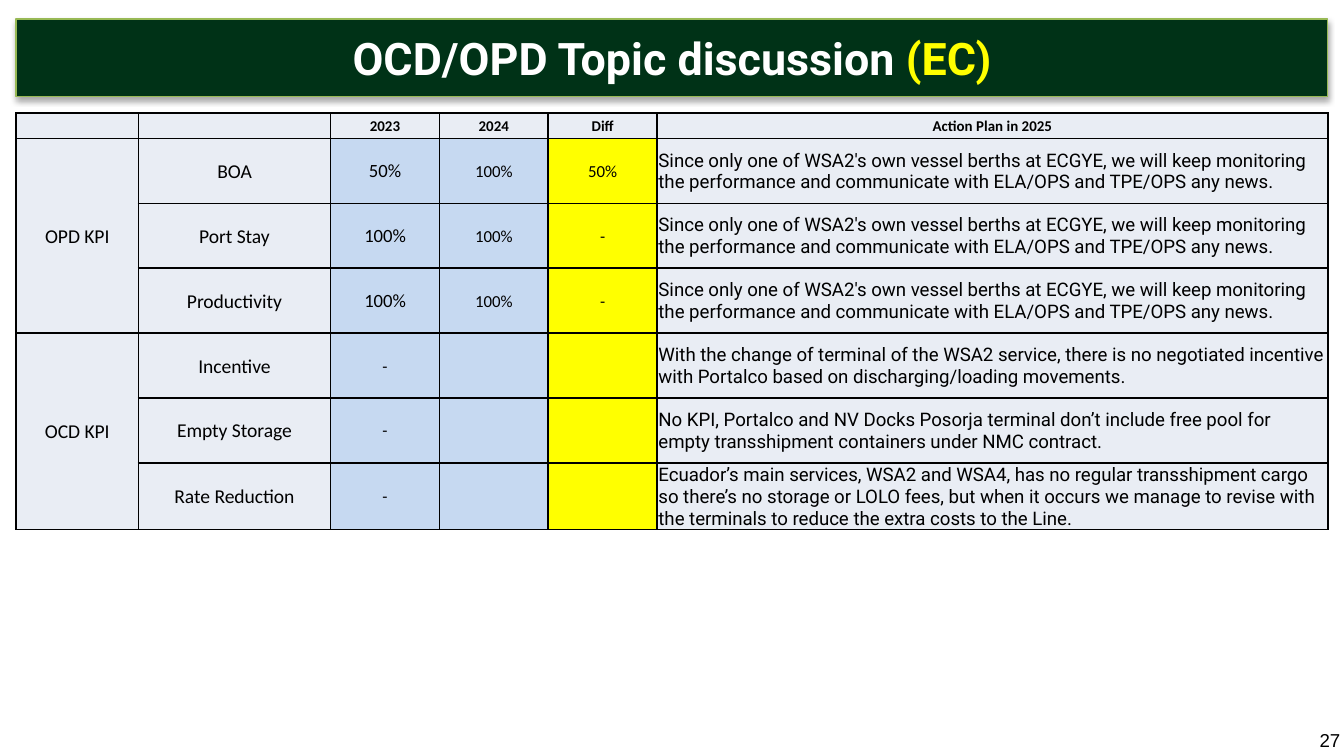
"""Build the OCD/OPD topic discussion slide with its KPI table."""
from lxml.etree import SubElement
from pptx import Presentation
from pptx.dml.color import RGBColor
from pptx.enum.text import MSO_ANCHOR, MSO_AUTO_SIZE, PP_ALIGN
from pptx.oxml.ns import qn
from pptx.util import Inches, Pt

COLORS = {
    "banner": "003217", "banner_line": "98B955", "white": "FFFFFF",
    "black": "000000", "pale": "E9EDF4", "blue": "C6D9F1", "yellow": "FFFF00",
}
TITLE = [("OCD/OPD Topic discussion ", "white"), ("(EC)", "yellow")]
PAGE_NUMBER = "27"
HEADER = ["", "", "2023", "2024", "Diff", "Action Plan in 2025"]
MONITORING = (
    "Since only one of WSA2's own vessel berths at ECGYE, we will keep monitoring "
    "the performance and communicate with ELA/OPS and TPE/OPS any news."
)
GROUPS = {
    "OPD KPI": [
        ("BOA", "50%", "100%", "50%", MONITORING),
        ("Port Stay", "100%", "100%", "-", MONITORING),
        ("Productivity", "100%", "100%", "-", MONITORING),
    ],
    "OCD KPI": [
        ("Incentive", "-", "", "",
         "With the change of terminal of the WSA2 service, there is no negotiated "
         "incentive with Portalco based on discharging/loading movements."),
        ("Empty Storage", "-", "", "",
         "No KPI, Portalco and NV Docks Posorja terminal don’t include free pool for "
         "empty transshipment containers under NMC contract."),
        ("Rate Reduction", "-", "", "",
         "Ecuador’s main services, WSA2 and WSA4, has no regular transshipment cargo "
         "so there’s no storage or LOLO fees, but when it occurs we manage to revise "
         "with the terminals to reduce the extra costs to the Line."),
    ],
}
COLUMNS = [
    (0.91, "pale", 10.5, "Calibri"), (1.43, "pale", 10.5, "Calibri"),
    (0.81, "blue", 10, "Calibri"), (0.81, "blue", 9, "Calibri"),
    (0.81, "yellow", 9, "Calibri"), (4.99, "pale", 10, "Roboto"),
]
SLIDE_WIDTH = 10
SLIDE_HEIGHT = SLIDE_WIDTH * 9 / 16
MARGIN = 0.12
CONTENT_WIDTH = SLIDE_WIDTH - 2 * MARGIN
TABLE_TOP, TABLE_HEIGHT, HEADER_HEIGHT = 0.84, 3.09, 0.19


def color(name):
    return RGBColor.from_string(COLORS[name])


def style(font, size, face, color_name="black", bold=False):
    font.size, font.name, font.bold = Pt(size), face, bold
    font.color.rgb = color(color_name)


def set_insets(frame, horizontal, top, bottom):
    frame.margin_left = frame.margin_right = Inches(horizontal)
    frame.margin_top, frame.margin_bottom = Inches(top), Inches(bottom)


def add_shadow(shape):
    effects = SubElement(shape.element.spPr, qn("a:effectLst"))
    shadow = SubElement(effects, qn("a:outerShdw"), blurRad=str(Pt(3.1)),
                        dist=str(Pt(1.8)), dir="5400000", rotWithShape="0")
    tint = SubElement(shadow, qn("a:srgbClr"), val=COLORS["black"])
    SubElement(tint, qn("a:alpha"), val="35000")


def add_borders(cell):
    properties = cell._tc.get_or_add_tcPr()
    for side in ("lnL", "lnR", "lnT", "lnB"):
        line = SubElement(properties, qn(f"a:{side}"), w=str(Pt(1)))
        fill = SubElement(line, qn("a:solidFill"))
        SubElement(fill, qn("a:srgbClr"), val=COLORS["black"])


def fill_cell(cell, text, fill_name, size, face, bold=False, centred=True):
    add_borders(cell)
    cell.fill.solid()
    cell.fill.fore_color.rgb = color(fill_name)
    cell.vertical_anchor = MSO_ANCHOR.MIDDLE
    set_insets(cell, 0.01, 0.01, 0)
    paragraph = cell.text_frame.paragraphs[0]
    paragraph.text = text
    paragraph.alignment = PP_ALIGN.CENTER if centred else PP_ALIGN.LEFT
    for run in paragraph.runs:
        style(run.font, size, face, bold=bold)
    SubElement(paragraph._p, qn("a:endParaRPr"), sz=str(int(size * 100)))


def add_title(slide):
    banner = slide.shapes.title
    banner.left, banner.top = Inches(MARGIN), Inches(0.14)
    banner.width, banner.height = Inches(CONTENT_WIDTH), Inches(0.58)
    banner.fill.solid()
    banner.fill.fore_color.rgb = color("banner")
    banner.line.color.rgb = color("banner_line")
    banner.line.width = Pt(0.75)
    add_shadow(banner)
    frame = banner.text_frame
    frame.auto_size = MSO_AUTO_SIZE.NONE
    frame.vertical_anchor = MSO_ANCHOR.MIDDLE
    set_insets(frame, 0, 0, 0)
    paragraph = frame.paragraphs[0]
    paragraph.alignment = PP_ALIGN.CENTER
    for text, color_name in TITLE:
        run = paragraph.add_run()
        run.text = text
        style(run.font, 24, "Roboto", color_name, bold=True)


def add_kpi_table(slide):
    rows = [(group if i == 0 else "", *kpi)
            for group, kpis in GROUPS.items() for i, kpi in enumerate(kpis)]
    kpi_table = slide.shapes.add_table(
        len(rows) + 1, len(COLUMNS), Inches(MARGIN), Inches(TABLE_TOP),
        Inches(CONTENT_WIDTH), Inches(TABLE_HEIGHT)).table
    for column, (width, *_) in zip(kpi_table.columns, COLUMNS):
        column.width = Inches(width)
    for row in kpi_table.rows:
        row.height = Inches((TABLE_HEIGHT - HEADER_HEIGHT) / len(rows))
    kpi_table.rows[0].height = Inches(HEADER_HEIGHT)

    for c, heading in enumerate(HEADER):
        fill_cell(kpi_table.cell(0, c), heading, "pale", 8, "Calibri", bold=True)
    for r, values in enumerate(rows, start=1):
        for c, (text, (_, fill_name, size, face)) in enumerate(zip(values, COLUMNS)):
            fill_cell(kpi_table.cell(r, c), text, fill_name,
                      9 if text == "-" else size, face,
                      centred=c < len(COLUMNS) - 1)

    first = 1
    for kpis in GROUPS.values():
        last = first + len(kpis) - 1
        kpi_table.cell(first, 0).merge(kpi_table.cell(last, 0))
        first = last + 1


def add_page_number(slide):
    number = slide.shapes.add_textbox(
        Inches(9.72), Inches(5.39), Inches(0.64), Inches(0.23))
    frame = number.text_frame
    frame.word_wrap = True
    frame.vertical_anchor = MSO_ANCHOR.MIDDLE
    frame.text = PAGE_NUMBER
    style(frame.paragraphs[0].runs[0].font, 10, "Arial")


def main():
    deck = Presentation()
    deck.slide_width, deck.slide_height = Inches(SLIDE_WIDTH), Inches(SLIDE_HEIGHT)
    slide = deck.slides.add_slide(deck.slide_layouts.get_by_name("Title Only"))
    add_title(slide)
    add_kpi_table(slide)
    add_page_number(slide)
    deck.save("out.pptx")


if __name__ == "__main__":
    main()
